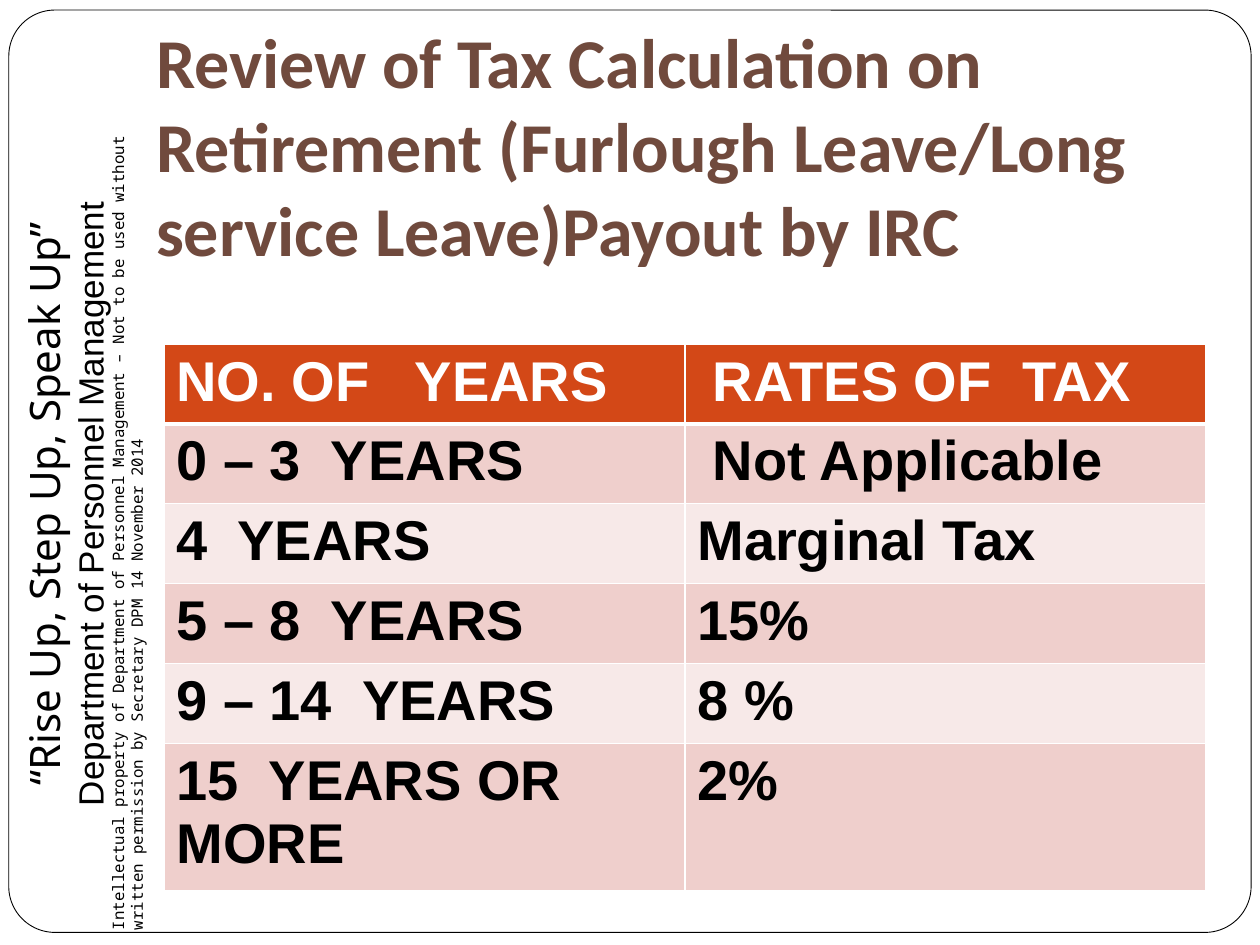
from dataclasses import dataclass, field

from lxml.etree import SubElement
from pptx import Presentation
from pptx.dml.color import RGBColor
from pptx.enum.shapes import MSO_SHAPE
from pptx.enum.text import MSO_ANCHOR, PP_ALIGN
from pptx.oxml.ns import qn
from pptx.util import Emu, Inches, Pt

COLUMNS, ROWS = 100, 75
SLIDE_WIDTH, SLIDE_HEIGHT = Inches(10), Inches(7.5)
COLORS = {
    "black": "000000",
    "white": "FFFFFF",
    "title": "704A3D",
    "header": "D34817",
    "odd": "EFCFCC",
    "even": "F7E9E8",
}
TAX_RATES = [
    ("NO. OF   YEARS", " RATES OF  TAX"),
    ("0 – 3  YEARS", " Not Applicable"),
    ("4  YEARS", "Marginal Tax"),
    ("5 – 8  YEARS", "15%"),
    ("9 – 14  YEARS", "8 %"),
    ("15  YEARS OR MORE", "2%"),
]


@dataclass
class Area:
    column: float
    row: float
    width: float
    height: float

    def lengths(self) -> tuple:
        return (
            across(self.column),
            down(self.row),
            across(self.width),
            down(self.height),
        )


@dataclass
class Line:
    text: str
    font: dict
    color: str = "black"
    alignment: PP_ALIGN = PP_ALIGN.LEFT


@dataclass
class Label:
    area: Area
    lines: list
    rotation: int = 0
    frame: dict = field(default_factory=dict)


LABELS = [
    Label(
        Area(-26.5, 35.8, 63.3, 8.4),
        [
            Line("“Rise Up, Step Up, Speak Up”",
                 {"name": "Noto Sans", "size": Pt(24)}, alignment=PP_ALIGN.CENTER),
            Line("Department of Personnel Management",
                 {"name": "Arial", "size": Pt(20)}, alignment=PP_ALIGN.CENTER),
        ],
        rotation=270,
    ),
    Label(
        Area(-25.5, 39.9, 68.5, 1.3),
        [Line("Intellectual property of Department of Personnel Management – "
              "Not to be used without written permission by Secretary DPM "
              "14 November 2014",
              {"name": "Noto Sans Mono", "size": Pt(9)})],
        rotation=270,
    ),
    Label(
        Area(11.4, 14.7, 87.5, 7.8),
        [Line("Review of Tax Calculation on Retirement (Furlough Leave/Long "
              "service Leave)Payout by IRC",
              {"name": "Calibri", "size": Pt(40), "bold": True}, "title")],
        frame={"vertical_anchor": MSO_ANCHOR.BOTTOM, "margin_bottom": Inches(0.1)},
    ),
]


def across(columns: float) -> Emu:
    return Emu(round(SLIDE_WIDTH * columns / COLUMNS))


def down(rows: float) -> Emu:
    return Emu(round(SLIDE_HEIGHT * rows / ROWS))


def rgb(name: str) -> RGBColor:
    return RGBColor.from_string(COLORS[name])


def apply(target, values: dict) -> None:
    for name, value in values.items():
        setattr(target, name, value)


def write_line(para, line: Line) -> None:
    para.alignment = line.alignment
    span = para.add_run()
    span.text = line.text
    apply(span.font, line.font)
    span.font.color.rgb = rgb(line.color)


def draw_frame(page, area: Area) -> None:
    box = page.shapes.add_shape(MSO_SHAPE.ROUNDED_RECTANGLE, *area.lengths())
    box.adjustments[0] = 0.05
    box.shadow.inherit = False
    box.fill.solid()
    box.fill.fore_color.rgb = rgb("white")
    box.line.color.rgb = rgb("black")
    box.line.width = Pt(0.5)


def draw_label(page, label: Label) -> None:
    box = page.shapes.add_textbox(*label.area.lengths())
    box.rotation = label.rotation
    apply(box.text_frame, {"word_wrap": True, **label.frame})
    for index, line in enumerate(label.lines):
        frame = box.text_frame
        para = frame.add_paragraph() if index else frame.paragraphs[0]
        write_line(para, line)


def draw_borders(cell, widths: dict) -> None:
    properties = cell._tc.get_or_add_tcPr()
    for position, (side, width) in enumerate(widths.items()):
        border = SubElement(properties, qn(f"a:{side}"), w=str(Pt(width)))
        fill = SubElement(border, qn("a:solidFill"))
        SubElement(fill, qn("a:srgbClr"), val=COLORS["white"])
        properties.insert(position, border)


def draw_table(page, area: Area, records: list) -> None:
    table = page.shapes.add_table(
        len(records), len(records[0]), *area.lengths()
    ).table
    for row, record in enumerate(records):
        background = "header" if row == 0 else "odd" if row % 2 else "even"
        for column, text in enumerate(record):
            cell = table.cell(row, column)
            cell.fill.solid()
            cell.fill.fore_color.rgb = rgb(background)
            write_line(
                cell.text_frame.paragraphs[0],
                Line(text, {"name": "Arial", "size": Pt(32), "bold": True},
                     "black" if row else "white"),
            )
            draw_borders(cell, {
                "lnL": 1,
                "lnR": 1,
                "lnT": 3 if row == 1 else 1,
                "lnB": 1 if row else 3,
            })


def main() -> None:
    deck = Presentation()
    apply(deck, {"slide_width": SLIDE_WIDTH, "slide_height": SLIDE_HEIGHT})
    page = deck.slides.add_slide(deck.slide_layouts[6])
    draw_frame(page, Area(0.7, 0.8, 98.6, 73.2))
    for label in LABELS:
        draw_label(page, label)
    draw_table(page, Area(13, 27.3, 82.7, 34.8), TAX_RATES)
    deck.save("out.pptx")


if __name__ == "__main__":
    main()
